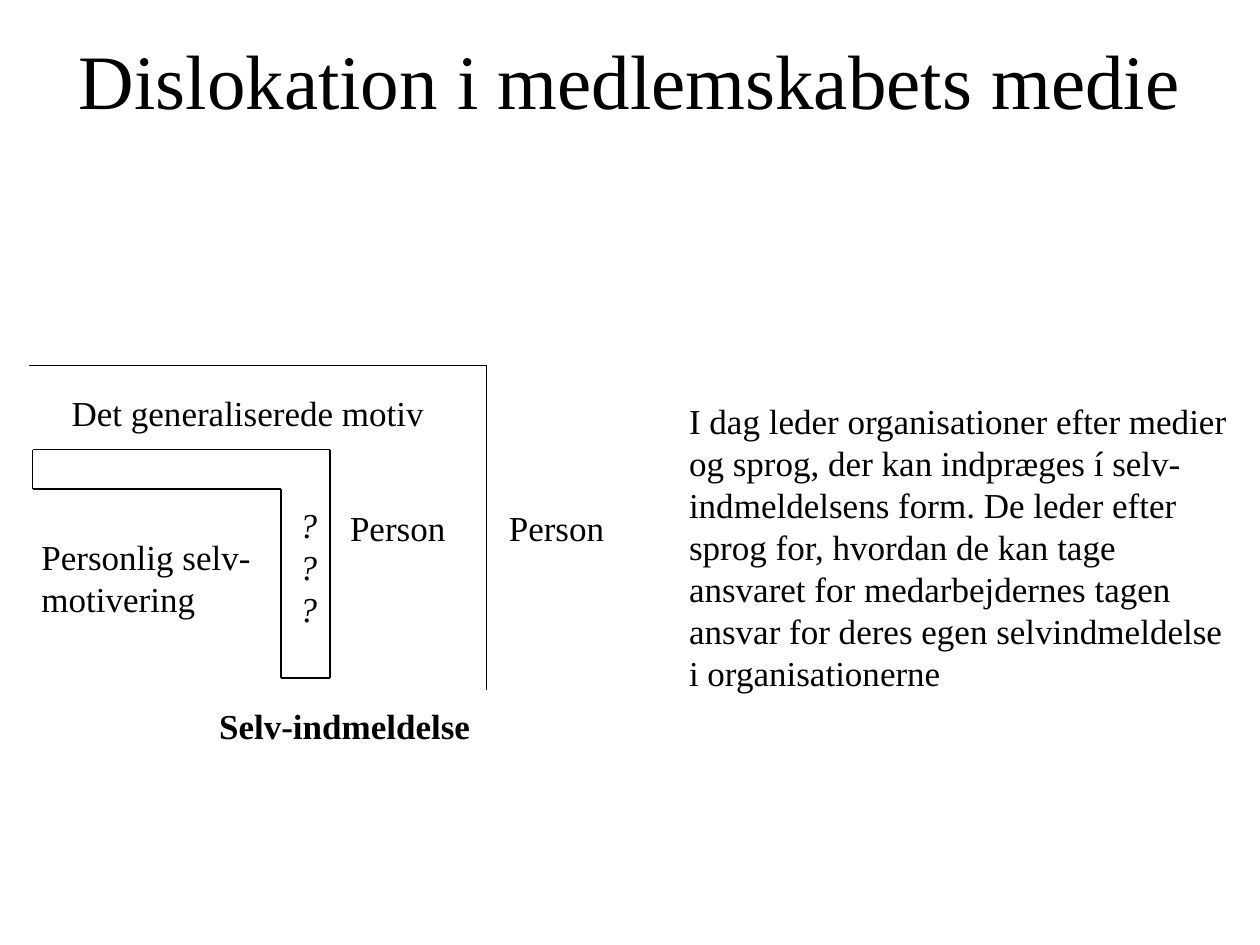
from itertools import pairwise

from pptx import Presentation
from pptx.dml.color import RGBColor
from pptx.enum.shapes import MSO_CONNECTOR
from pptx.enum.text import MSO_ANCHOR, MSO_AUTO_SIZE, PP_ALIGN
from pptx.oxml.ns import qn
from pptx.util import Inches, Pt
from lxml import etree

STRAIGHT = MSO_CONNECTOR.STRAIGHT
TOP = MSO_ANCHOR.TOP
CENTER = PP_ALIGN.CENTER
GROW = MSO_AUTO_SIZE.SHAPE_TO_FIT_TEXT
NO_AUTOSIZE = MSO_AUTO_SIZE.NONE
FONT = "Times New Roman"
COLORS = {"ink": "000000"}


def format_font(font, size, **extra):
    values = {"name": FONT, "size": Pt(size), **extra}
    for attribute, value in values.items():
        setattr(font, attribute, value)
    font.color.rgb = RGBColor.from_string(COLORS["ink"])


prs = Presentation()
prs.slide_width = Inches(10)
prs.slide_height = Inches(7.5)
slide = prs.slides.add_slide(prs.slide_layouts[5])

heading = slide.shapes.title
heading.left, heading.top = Inches(0.5), Inches(0.13)
heading.width, heading.height = Inches(9), Inches(1.25)
heading.text_frame.text = "Dislokation i medlemskabets medie"
heading_format = {
    "auto_size": NO_AUTOSIZE,
    "vertical_anchor": TOP,
    "margin_top": Inches(0.13),
    "word_wrap": True,
}
for attribute, value in heading_format.items():
    setattr(heading.text_frame, attribute, value)
heading_line = heading.text_frame.paragraphs[0]
heading_line.alignment = CENTER
format_font(heading_line.runs[0].font, 44)

outer_boundary = [(0.23, 2.9), (3.86, 2.9), (3.86, 5.48)]
inner_band = [(0.26, 3.57), (2.62, 3.57), (2.62, 5.38), (2.23, 5.38),
              (2.23, 3.88), (0.26, 3.88), (0.26, 3.57)]
for corners in (outer_boundary, inner_band):
    for start, end in pairwise(corners):
        edge = slide.shapes.add_connector(
            STRAIGHT, *(Inches(value) for value in start + end))
        edge.line.width = Pt(0.75)
        edge.line.color.rgb = RGBColor.from_string(COLORS["ink"])
        etree.SubElement(edge._element.spPr, qn("a:effectLst"))

labels = [
    ("Det generaliserede motiv", 0.47, 3.06, 3.02, 0.44, False, {}),
    ("Personlig selv-motivering", 0.23, 4.2, 1.99, 0.77, True, {}),
    ("?\n?\n?", 2.28, 3.95, 0.34, 1.11, False, {"italic": True}),
    ("Person", 2.68, 3.97, 0.97, 0.44, False, {}),
    ("Person", 3.94, 3.97, 0.97, 0.44, False, {}),
    ("Selv-indmeldelse", 1.64, 5.54, 2.21, 0.44, False, {"bold": True}),
    ("I dag leder organisationer efter medier og sprog, der kan indpræges í "
     "selv-indmeldelsens form. De leder efter sprog for, hvordan de kan tage "
     "ansvaret for medarbejdernes tagen ansvar for deres egen "
     "selvindmeldelse i organisationerne", 5.37, 3.12, 4.51, 2.46, True, {}),
]
for wording, left, top, width, height, wraps, emphasis in labels:
    label = slide.shapes.add_textbox(
        Inches(left), Inches(top), Inches(width), Inches(height))
    frame = label.text_frame
    frame.text = wording
    frame.word_wrap = wraps
    frame.auto_size = GROW
    for paragraph in frame.paragraphs:
        format_font(paragraph.runs[0].font, 20, **emphasis)

prs.save("out.pptx")
